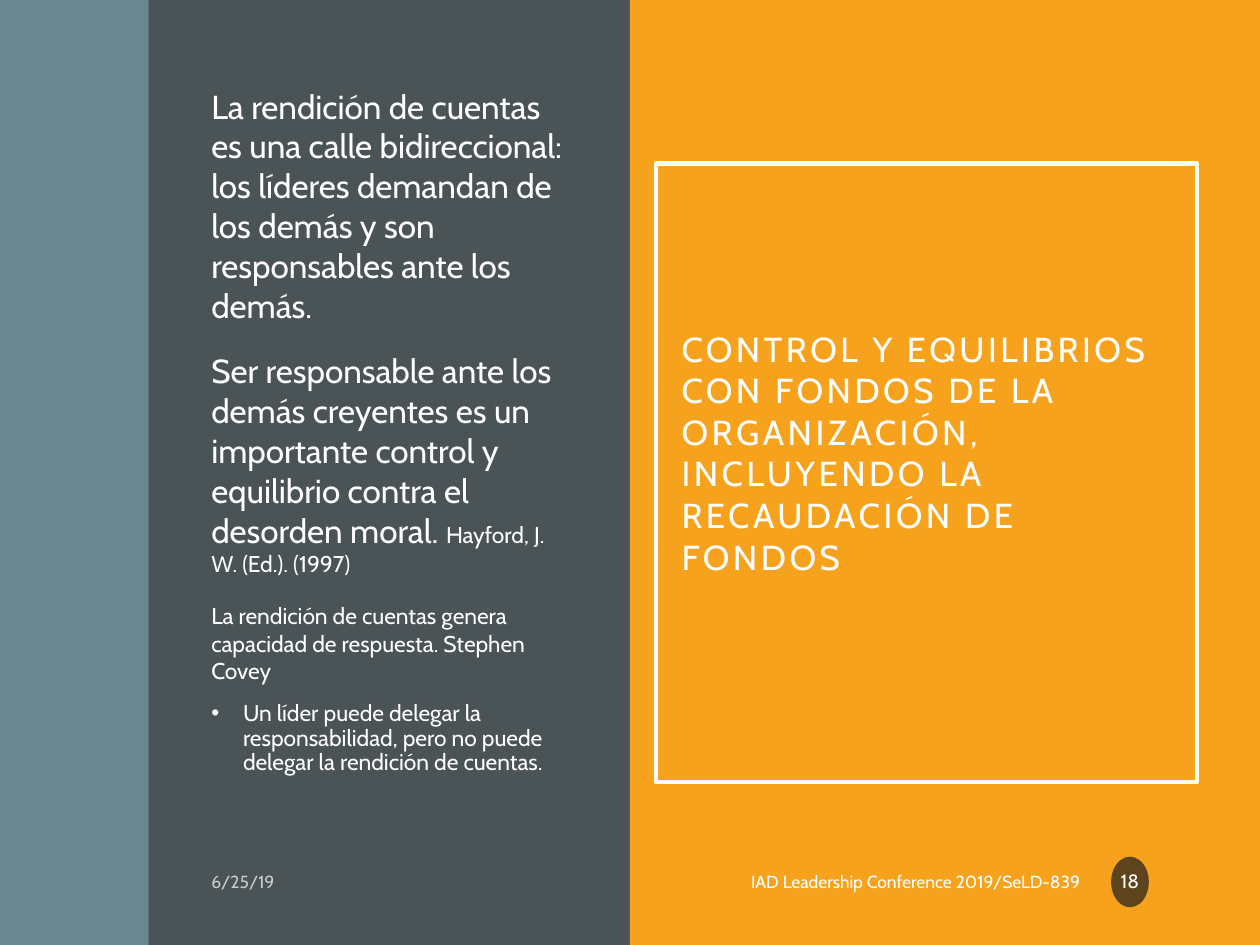
from lxml.etree import SubElement
from pptx import Presentation
from pptx.dml.color import RGBColor
from pptx.enum.shapes import MSO_SHAPE as Shape
from pptx.enum.text import MSO_ANCHOR as Anchor, PP_ALIGN as Align
from pptx.oxml.ns import qn
from pptx.util import Cm, Pt

COLORS = {"slate": "4A5356", "teal": "6B8891", "orange": "F6A21D", "white": "FFFFFF", "black": "1D1D1D"}


def paint(fill, color, opacity=100):
    fill.solid()
    fill.fore_color.rgb = RGBColor.from_string(COLORS[color])
    if opacity < 100:
        for element in fill._xPr.iter(qn("a:srgbClr")):
            SubElement(element, qn("a:alpha"), val=str(opacity * 1000))


def write(shape, paragraphs, anchor=Anchor.MIDDLE, margins=(0.25, 0.13, 0.25, 0.13), opacity=100):
    frame = shape.text_frame
    frame.word_wrap = True
    frame.vertical_anchor = anchor
    for side, margin in zip(("left", "top", "right", "bottom"), margins):
        setattr(frame, f"margin_{side}", Cm(margin))
    for index, (layout, runs) in enumerate(paragraphs):
        paragraph = frame.add_paragraph() if index else frame.paragraphs[0]
        for name, value in layout.items():
            setattr(paragraph, name, value)
        for text, size in runs:
            run = paragraph.add_run()
            run.text = text
            run.font.name = "Cabin"
            run.font.size = Pt(size)
            paint(run.font.fill, "white", opacity)
    return frame


presentation = Presentation()
presentation.slide_width, presentation.slide_height = Cm(25.4), Cm(19.05)
slide = presentation.slides.add_slide(presentation.slide_layouts[6])
paint(slide.background.fill, "slate")

for left, width, color in ((0, 3, "teal"), (3, 9.7, "slate"), (12.7, 12.7, "orange")):
    panel = slide.shapes.add_shape(Shape.RECTANGLE, Cm(left), 0, Cm(width), Cm(19.05))
    panel.shadow.inherit = False
    paint(panel.fill, color)
    panel.line.fill.background()

left_aligned = {"alignment": Align.LEFT, "line_spacing": 1.0}
spaced = {**left_aligned, "space_before": Pt(14.4)}
bulleted = {**left_aligned, "line_spacing": 0.9, "space_before": Pt(10)}
body = slide.shapes.add_textbox(Cm(4.01), Cm(1.6), Cm(7.72), Cm(15.42))
body_frame = write(body, [
    (left_aligned, [("La rendición de cuentas es una calle bidireccional: los líderes demandan de "
                     "los demás y son responsables ante los demás.", 19)]),
    (spaced, [("Ser responsable ante los demás creyentes es un importante control y "
               "equilibrio contra el desorden moral. ", 19), ("Hayford, J. W. (Ed.). (1997)", 13)]),
    (spaced, [("La rendición de cuentas genera capacidad de respuesta. Stephen Covey", 13)]),
    (bulleted, [("Un líder puede delegar la responsabilidad, pero no puede delegar la "
                 "rendición de cuentas.", 13)]),
], Anchor.TOP)
properties = body_frame.paragraphs[-1]._p.get_or_add_pPr()
properties.set("marL", str(Cm(0.64)))
properties.set("indent", str(-Cm(0.64)))
SubElement(properties, qn("a:buFont"), typeface="Arial")
SubElement(properties, qn("a:buChar"), char="•")

title = slide.shapes.add_shape(Shape.RECTANGLE, Cm(13.23), Cm(3.3), Cm(10.9), Cm(12.47))
title.shadow.inherit = False
title.fill.background()
paint(title.line.fill, "white")
title.line.width = Pt(2.5)
title_frame = write(title, [
    (left_aligned, [("CONTROL Y EQUILIBRIOS CON FONDOS DE LA ORGANIZACIÓN, INCLUYENDO LA "
                     "RECAUDACIÓN DE FONDOS", 19.8)]),
], Anchor.TOP, (0.51, 3.3, 0.51, 0.51))
title_frame.paragraphs[0].runs[0].font._element.set("spc", "200")

for left, width, alignment, text, opacity in (
    (4.01, 5.82, Align.LEFT, "6/25/19", 70),
    (13.23, 8.79, Align.RIGHT, "IAD Leadership Conference 2019/SeLD-839", 100),
):
    footer = slide.shapes.add_textbox(Cm(left), Cm(17.32), Cm(width), Cm(0.89))
    write(footer, [({"alignment": alignment}, [(text, 10)])], opacity=opacity)

badge = slide.shapes.add_shape(Shape.OVAL, Cm(22.4), Cm(17.27), Cm(0.76), Cm(1.02))
badge.shadow.inherit = False
paint(badge.fill, "black", 70)
badge.line.fill.background()
write(badge, [({"alignment": Align.CENTER, "line_spacing": 0.9}, [("18", 11)])], margins=(0.05, 0.13, 0.05, 0.13))
badge.text_frame.word_wrap = False

presentation.save("out.pptx")
